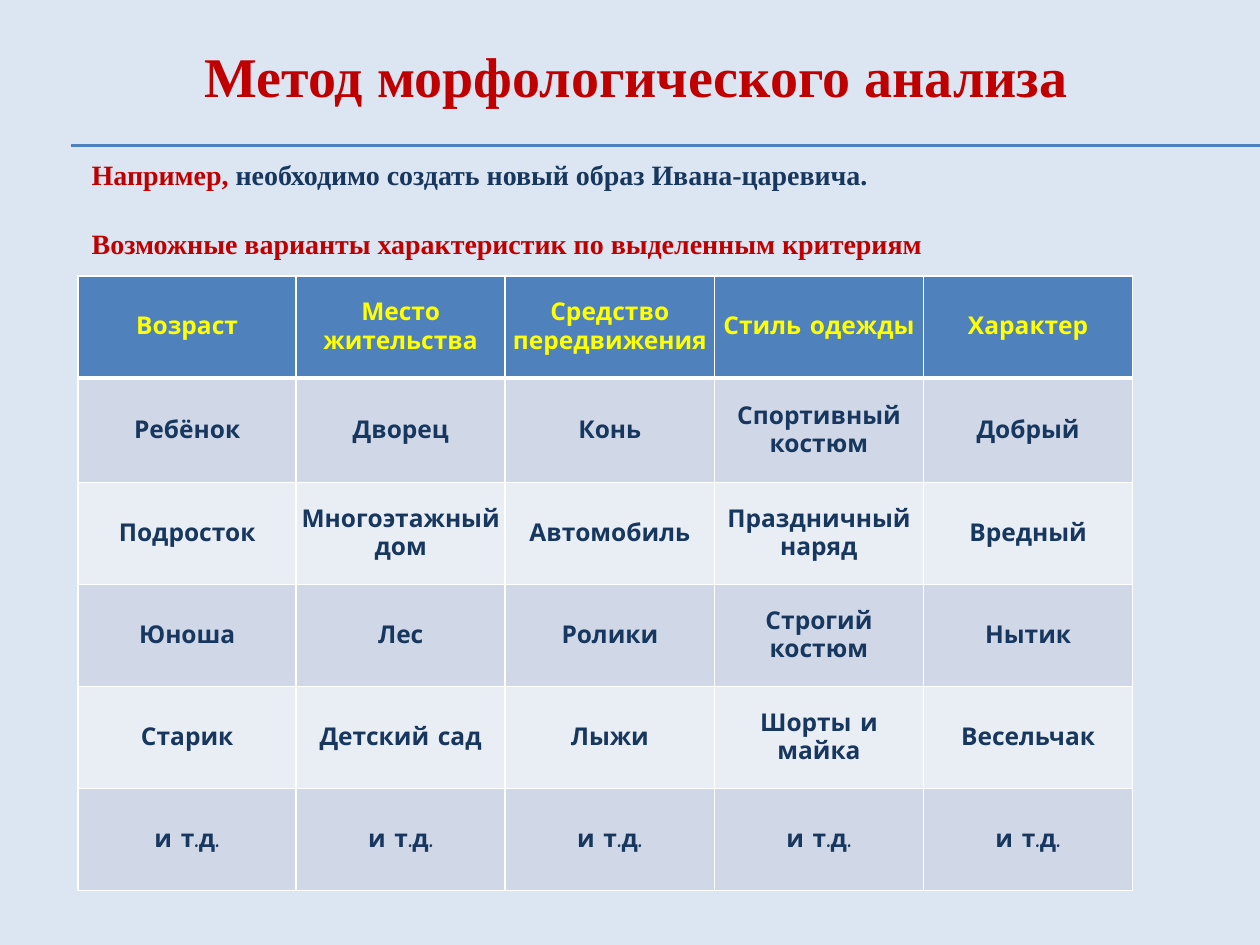
from lxml import etree
from pptx import Presentation
from pptx.dml.color import RGBColor
from pptx.enum import shapes, text
from pptx.oxml import ns
from pptx.util import Inches, Pt

BACKGROUND = RGBColor(0xDC, 0xE6, 0xF2)
BLUE = RGBColor(0x4F, 0x81, 0xBD)
RED = RGBColor(0xC0, 0x00, 0x00)
NAVY = RGBColor(0x17, 0x37, 0x5E)
YELLOW = RGBColor(0xFF, 0xFF, 0x00)
WHITE = RGBColor(0xFF, 0xFF, 0xFF)
BANDS = [RGBColor(0xD0, 0xD8, 0xE8), RGBColor(0xE9, 0xED, 0xF4)]

HEADING_FONT = "Times New Roman"
TABLE_FONT = "Comic Neue"
COLUMN_WIDTHS = [1.73, 1.66, 1.66, 1.66, 1.66]
ROW_HEIGHTS = [0.81, 0.83, 0.81, 0.81, 0.81, 0.81]
CRITERIA = [
    ["Возраст", "Место жительства", "Средство передвижения", "Стиль одежды", "Характер"],
    ["Ребёнок", "Дворец", "Конь", "Спортивный костюм", "Добрый"],
    ["Подросток", "Многоэтажный дом", "Автомобиль", "Праздничный наряд", "Вредный"],
    ["Юноша", "Лес", "Ролики", "Строгий костюм", "Нытик"],
    ["Старик", "Детский сад", "Лыжи", "Шорты и майка", "Весельчак"],
    ["и т.д."] * 5,
]


def set_font(font, name, size):
    font.name = name
    font.size = Pt(size)
    font.bold = True


def add_rule(page, y):
    rule = page.shapes.add_connector(
        shapes.MSO_CONNECTOR.STRAIGHT, Inches(0.56), Inches(y), Inches(10), Inches(y))
    rule.line.color.rgb = BLUE
    rule.line.width = Pt(0.75)
    etree.SubElement(rule._element.spPr, ns.qn("a:effectLst"))


def add_text(page, left, top, width, height, size, align, paragraphs, gap=0, margin_top=0.05):
    box = page.shapes.add_textbox(Inches(left), Inches(top), Inches(width), Inches(height))
    frame = box.text_frame
    frame.word_wrap = True
    frame.margin_top = Inches(margin_top)
    for index, spans in enumerate(paragraphs):
        para = frame.add_paragraph() if index else frame.paragraphs[0]
        para.alignment = align
        para.space_before = Pt(gap if index else 0)
        set_font(para.font, HEADING_FONT, size)
        for words, color in spans:
            span = para.add_run()
            span.text = words
            span.font.color.rgb = color


def set_borders(cell, top, bottom):
    properties = cell._tc.get_or_add_tcPr()
    widths = {"a:lnL": 1, "a:lnR": 1, "a:lnT": top, "a:lnB": bottom}
    for index, (tag, width) in enumerate(widths.items()):
        border = etree.Element(ns.qn(tag), w=str(Pt(width)))
        fill = etree.SubElement(border, ns.qn("a:solidFill"))
        etree.SubElement(fill, ns.qn("a:srgbClr"), val=str(WHITE))
        properties.insert(index, border)


def fill_cell(cell, words, row):
    cell.text = words
    cell.vertical_anchor = text.MSO_ANCHOR.MIDDLE
    cell.margin_left = cell.margin_right = cell.margin_top = cell.margin_bottom = 0
    cell.fill.solid()
    cell.fill.fore_color.rgb = BANDS[(row - 1) % 2] if row else BLUE
    para = cell.text_frame.paragraphs[0]
    para.alignment = text.PP_ALIGN.CENTER
    set_font(para.font, TABLE_FONT, 14)
    para.font.color.rgb = NAVY if row else YELLOW
    set_borders(cell, top=3 if row == 1 else 1, bottom=1 if row else 3)


def add_criteria_table(page):
    table = page.shapes.add_table(
        len(ROW_HEIGHTS), len(COLUMN_WIDTHS), Inches(0.62), Inches(2.19),
        Inches(sum(COLUMN_WIDTHS)), Inches(sum(ROW_HEIGHTS))).table
    for column, width in zip(table.columns, COLUMN_WIDTHS):
        column.width = Inches(width)
    for row, height in enumerate(ROW_HEIGHTS):
        table.rows[row].height = Inches(height)
        for column, words in enumerate(CRITERIA[row]):
            fill_cell(table.cell(row, column), words, row)


def main():
    deck = Presentation()
    deck.slide_width, deck.slide_height = Inches(10), Inches(7.5)
    page = deck.slides.add_slide(deck.slide_layouts[6])
    page.background.fill.solid()
    page.background.fill.fore_color.rgb = BACKGROUND

    for y in (1.15, 1.16):
        add_rule(page, y)
    add_text(page, 0.63, 0.92, 8.83, 2.29, 16, text.PP_ALIGN.JUSTIFY, [
        [("Например, ", RED), ("необходимо создать новый образ Ивана-царевича.", NAVY)],
        [("Возможные варианты характеристик по выделенным критериям", RED)],
    ], gap=20.5, margin_top=0.33)
    add_text(page, 1.49, 0.28, 7.12, 0.64, 32, text.PP_ALIGN.CENTER,
             [[("Метод морфологического анализа", RED)]])
    add_criteria_table(page)
    deck.save("out.pptx")


if __name__ == "__main__":
    main()
